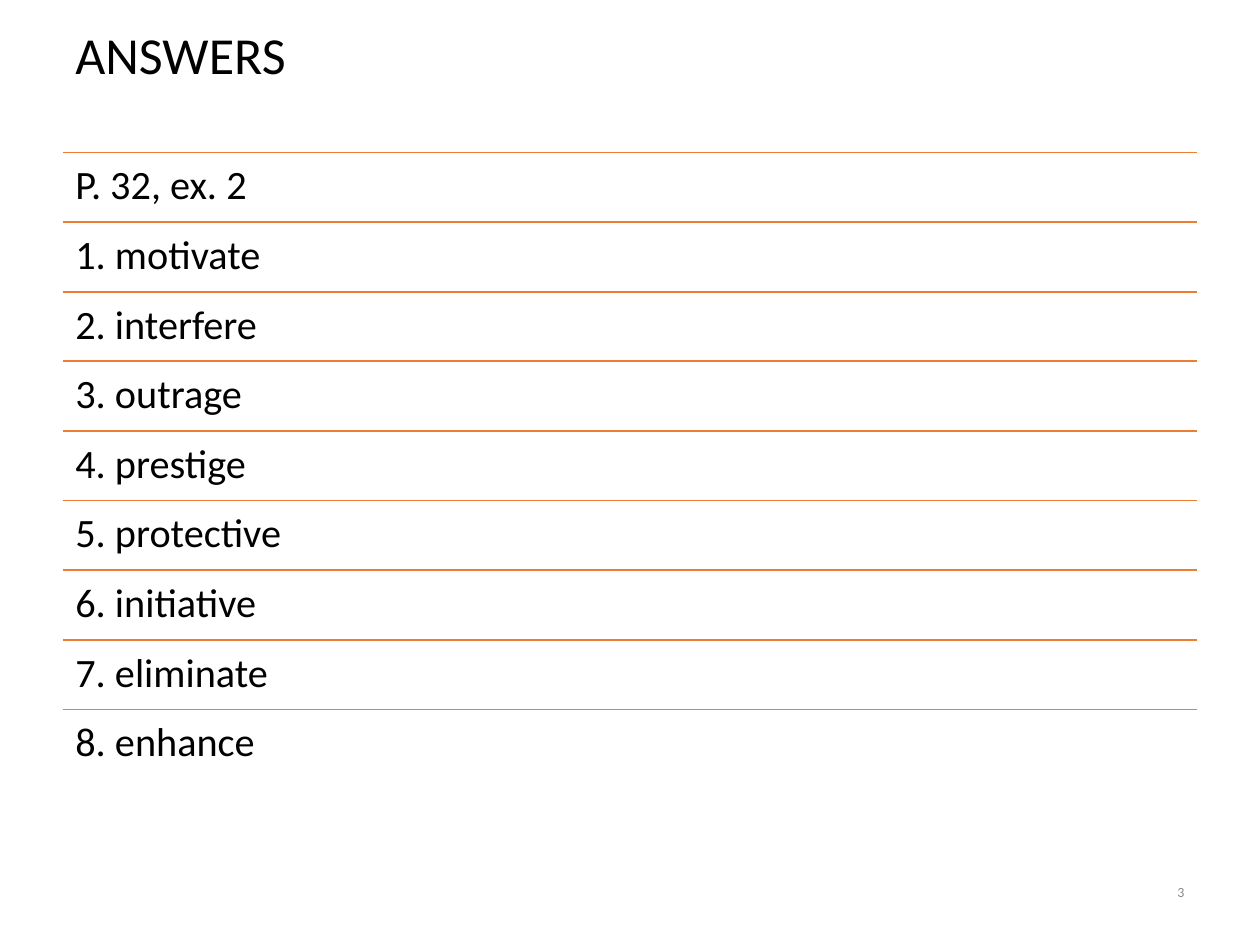
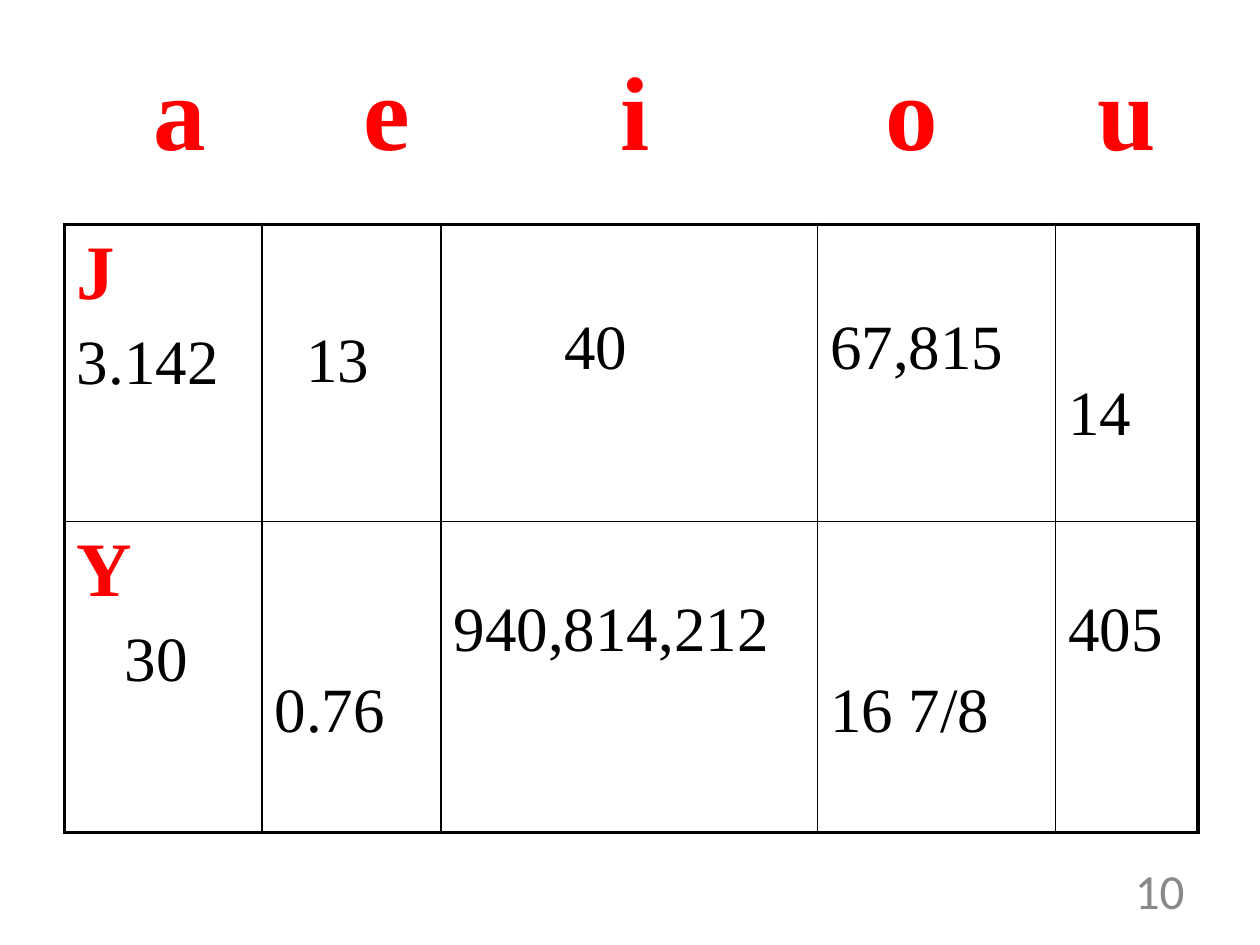
from dataclasses import dataclass

from lxml import etree
from pptx import Presentation
from pptx.dml.color import RGBColor
from pptx.enum.shapes import MSO_CONNECTOR
from pptx.enum.text import MSO_ANCHOR, PP_ALIGN
from pptx.oxml.ns import qn
from pptx.util import Inches, Pt

LINE = MSO_CONNECTOR.STRAIGHT
TOP, MIDDLE = MSO_ANCHOR.TOP, MSO_ANCHOR.MIDDLE
LEFT, RIGHT = PP_ALIGN.LEFT, PP_ALIGN.RIGHT

# Content
HEAD = "ANSWERS"
WORDS = ["P. 32, ex. 2", "1. motivate", "2. interfere", "3. outrage",
         "4. prestige", "5. protective", "6. initiative", "7. eliminate",
         "8. enhance"]
# vowel, centre measured from the start of the title text
VOWELS = [("a", 0.83), ("e", 2.47), ("i", 4.44), ("o", 6.64), ("u", 8.34)]
# per cell: red label, number, drop from the cell top, indent of the number
GRID = [
    [("J", "3.142", 0.05, 0), ("", "13", 0.81, 0.25), ("", "40", 0.71, 0.88),
     ("", "67,815", 0.71, 0), ("", "14", 1.23, 0)],
    [("Y", "30", 0.05, 0.38), ("", "0.76", 1.23, 0),
     ("", "940,814,212", 0.59, 0), ("", "16 7/8", 1.23, 0),
     ("", "405", 0.59, 0)],
]
COLS = [1.57, 1.42, 2.99, 1.89, 1.13]
ROWS = [2.36, 2.47]


@dataclass(frozen=True)
class Theme:
    ink: str = "000000"
    red: str = "FF0000"
    rule: str = "ED7D31"
    grey: str = "898989"
    sans: str = "Calibri"
    serif: str = "Times New Roman"
    head: float = 29.7
    word: float = 23
    vowel: float = 60
    label: float = 44
    number: float = 36
    thin: float = 1
    thick: float = 2.25
    left: float = 0.5
    width: float = 9


T = Theme()


def style(obj, **values):
    for key, value in values.items():
        setattr(obj, key, value)


def write(para, text, size, face, color, bold=False):
    run = para.add_run()
    run.text = text
    style(run.font, size=Pt(size), name=face, bold=bold)
    run.font.color.rgb = RGBColor.from_string(color)


def add_text(slide, at, text, size, face, color, bold=False,
             anchor=MIDDLE, align=LEFT, pad=0.05):
    box = slide.shapes.add_textbox(*map(Inches, at))
    frame = box.text_frame
    style(frame, word_wrap=True, vertical_anchor=anchor,
          margin_top=Inches(pad), margin_bottom=Inches(pad))
    para = frame.paragraphs[0]
    style(para, alignment=align, line_spacing=0.9)
    write(para, text, size, face, color, bold)
    return para


def add_page(slide, number, size):
    add_text(slide, (7.17, 6.83, 2.33, 0.52), number, size, T.sans, T.grey,
             align=RIGHT)


def add_rule(slide, y):
    line = slide.shapes.add_connector(
        LINE, Inches(T.left), Inches(y), Inches(T.left + T.width), Inches(y))
    line.line.width = Pt(T.thin)
    line.line.color.rgb = RGBColor.from_string(T.rule)
    etree.SubElement(line._element.spPr, qn("a:effectLst"))


def set_tabs(para, stops):
    tabs = etree.SubElement(para._p.get_or_add_pPr(), qn("a:tabLst"))
    for stop in stops:
        etree.SubElement(tabs, qn("a:tab"), pos=str(Inches(stop)), algn="ctr")


def set_edges(cell, edges):
    """Draw cell borders from a dict of side letter to width in points."""
    props = cell._tc.get_or_add_tcPr()
    for spot, (side, width) in enumerate(edges.items()):
        line = etree.Element(qn(f"a:ln{side}"), w=str(Pt(width)))
        fill = etree.SubElement(line, qn("a:solidFill"))
        etree.SubElement(fill, qn("a:srgbClr"), val=T.ink)
        props.insert(spot, line)


def fill_cell(cell, label, number, drop, indent):
    style(cell, margin_top=Inches(drop), vertical_anchor=TOP)
    cell.fill.background()
    para = cell.text_frame.paragraphs[0]
    if label:
        write(para, label, T.label, T.serif, T.red, True)
        para = cell.text_frame.add_paragraph()
        para.space_before = Pt(T.number * 0.2)
    para._p.get_or_add_pPr().set("marL", str(Inches(indent)))
    write(para, number, T.number, T.serif, T.ink)


def add_answers(slide):
    add_text(slide, (T.left, 0.18, T.width, 0.56), HEAD, T.head, T.sans, T.ink)
    first, last = 1.21, 5.63
    step = (last - first) / (len(WORDS) - 1)
    for i, word in enumerate(WORDS):
        y = first + i * step
        add_rule(slide, y)
        add_text(slide, (T.left, y, T.width, step), word, T.word, T.sans,
                 T.ink, anchor=TOP, pad=0.1)
    add_page(slide, "3", 8)


def add_numbers(slide):
    title = "".join(f"\t{vowel}" for vowel, _ in VOWELS)
    para = add_text(slide, (T.left, 0.3, T.width, 1.25), title, T.vowel,
                    T.serif, T.red, True)
    set_tabs(para, [stop for _, stop in VOWELS])
    add_page(slide, "10", 28)

    table = slide.shapes.add_table(
        len(ROWS), len(COLS), Inches(0.51), Inches(1.78),
        Inches(sum(COLS)), Inches(sum(ROWS))).table
    style(table, first_row=False, horz_banding=False)
    for col, width in zip(table.columns, COLS):
        col.width = Inches(width)
    for row, height in zip(table.rows, ROWS):
        row.height = Inches(height)
    for r, items in enumerate(GRID):
        for c, item in enumerate(items):
            cell = table.cell(r, c)
            fill_cell(cell, *item)
            outer = {"L": c == 0, "R": c == len(COLS) - 1,
                     "T": r == 0, "B": r == len(ROWS) - 1}
            set_edges(cell, {side: T.thick if out else T.thin
                             for side, out in outer.items()})


def main():
    deck = Presentation()
    style(deck, slide_width=Inches(10), slide_height=Inches(7.5))
    for build in (add_answers, add_numbers):
        build(deck.slides.add_slide(deck.slide_layouts[6]))
    deck.save("out.pptx")


if __name__ == "__main__":
    main()
